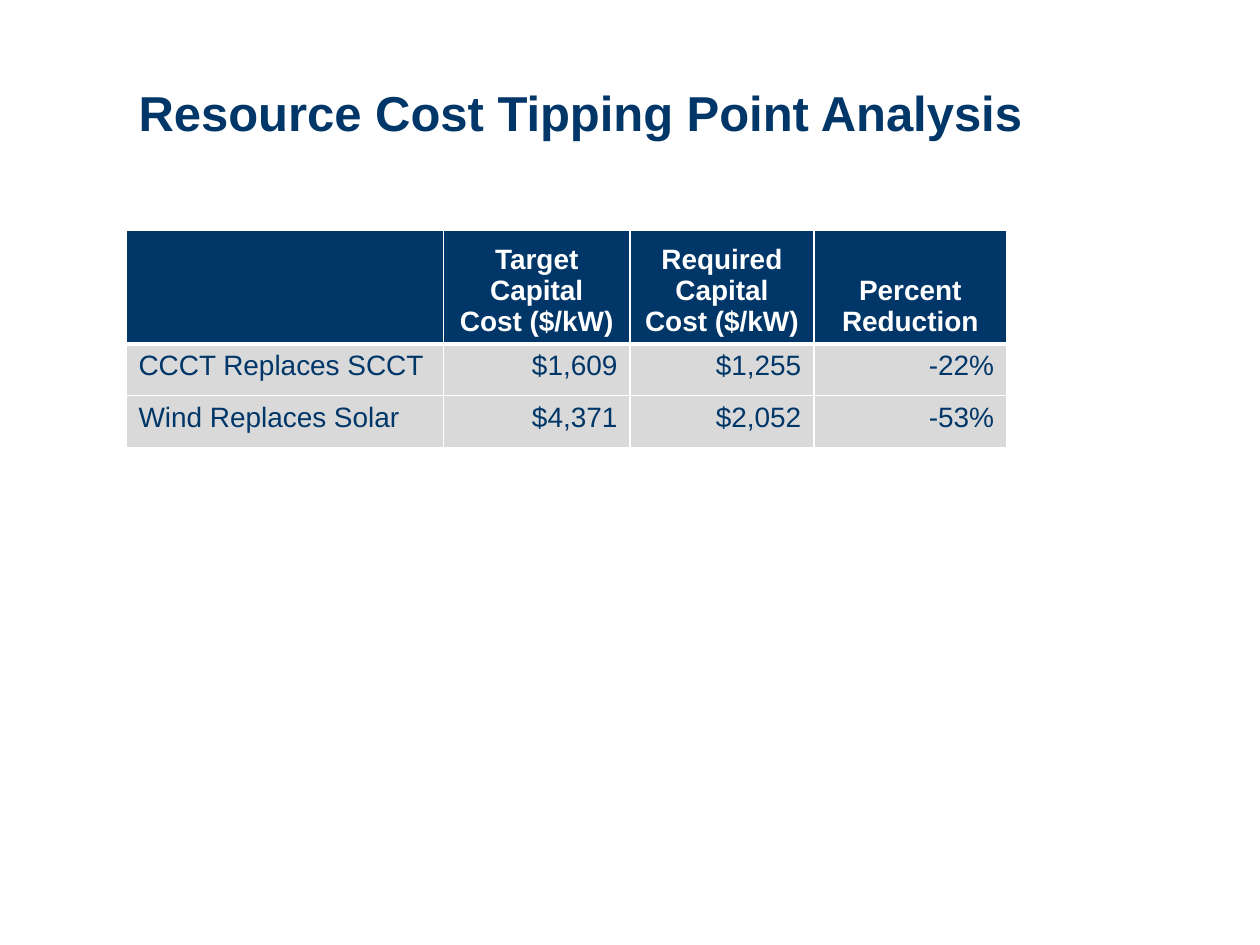
from pptx import Presentation, util as u
from pptx.dml.color import RGBColor
from pptx.enum import text
from pptx.oxml import parse_xml
from pptx.oxml.ns import nsdecls

NAVY, GREY, WHITE = "013668", "D9D9D9", "FFFFFF"
LEFT, MID, RIGHT = text.PP_ALIGN.LEFT, text.PP_ALIGN.CENTER, text.PP_ALIGN.RIGHT
TOP, LOW = text.MSO_ANCHOR.TOP, text.MSO_ANCHOR.BOTTOM


def color(code):
    return RGBColor.from_string(code)


def style(item, values):
    for name, value in values.items():
        setattr(item, name, value)


class Deck:
    def __init__(self, wide, high):
        self.prs = Presentation()
        self.prs.slide_width, self.prs.slide_height = u.Inches(wide), u.Inches(high)
        self.slide = self.prs.slides.add_slide(self.prs.slide_layouts[6])
        self.font = {"name": "Arial", "size": u.Pt(16), "bold": False}

    def place(self, x, y, w, h):
        """Turn shares of the slide's size into lengths."""
        wide, high = self.prs.slide_width, self.prs.slide_height
        return int(x * wide), int(y * high), int(w * wide), int(h * high)

    def label(self, para, words, ink, align=LEFT, **font):
        para.text = words
        para.alignment = align
        style(para.font, {**self.font, **font})
        para.font.color.rgb = color(ink)

    def title(self, words, box):
        frame = self.slide.shapes.add_textbox(*self.place(*box)).text_frame
        style(frame, {"word_wrap": True, "vertical_anchor": LOW, "margin_left": 0,
                      "margin_right": 0, "margin_top": 0, "margin_bottom": 0})
        para = frame.paragraphs[0]
        self.label(para, words, NAVY, size=u.Pt(28), bold=True)
        para.line_spacing = u.Pt(27)

    def edge(self, cell, side, width):
        cell._tc.get_or_add_tcPr().append(parse_xml(
            f'<a:{side} {nsdecls("a")} w="{u.Pt(width)}"><a:solidFill>'
            f'<a:srgbClr val="{WHITE}"/></a:solidFill></a:{side}>'))

    def cell(self, cell, head, over, under):
        """Style one cell; over and under are the widths of its top and bottom lines."""
        for side, width in (("lnL", 1), ("lnR", 1), ("lnT", over), ("lnB", under)):
            self.edge(cell, side, width)
        cell.fill.solid()
        cell.fill.fore_color.rgb = color(NAVY if head else GREY)
        cell.vertical_anchor = LOW if head else TOP

    def table(self, rows, box, widths, heights):
        grid = self.slide.shapes.add_table(len(rows), len(widths), *self.place(*box)).table
        for col, width in zip(grid.columns, widths):
            col.width = u.Inches(width)
        for r, (row, height) in enumerate(zip(rows, heights)):
            grid.rows[r].height = u.Inches(height)
            head = r == 0
            for c, words in enumerate(row):
                cell = grid.cell(r, c)
                self.cell(cell, head, 3 if r == 1 else 1, 3 if head else 1)
                align = MID if head else RIGHT if c else LEFT
                self.label(cell.text_frame.paragraphs[0], words,
                           WHITE if head else NAVY, align, bold=head)


def main():
    deck = Deck(10, 7.5)
    deck.title("Resource Cost Tipping Point Analysis", (0.11, 0.02, 0.84, 0.13))
    deck.table(
        [["", "Target Capital Cost ($/kW)", "Required Capital Cost ($/kW)", "Percent Reduction"],
         ["CCCT Replaces SCCT", "$1,609", "$1,255", "-22%"],
         ["Wind Replaces Solar", "$4,371", "$2,052", "-53%"]],
        (0.1, 0.244, 0.7, 0.22), [2.52, 1.48, 1.46, 1.53], [0.83, 0.41, 0.41])
    deck.prs.save("out.pptx")


if __name__ == "__main__":
    main()
